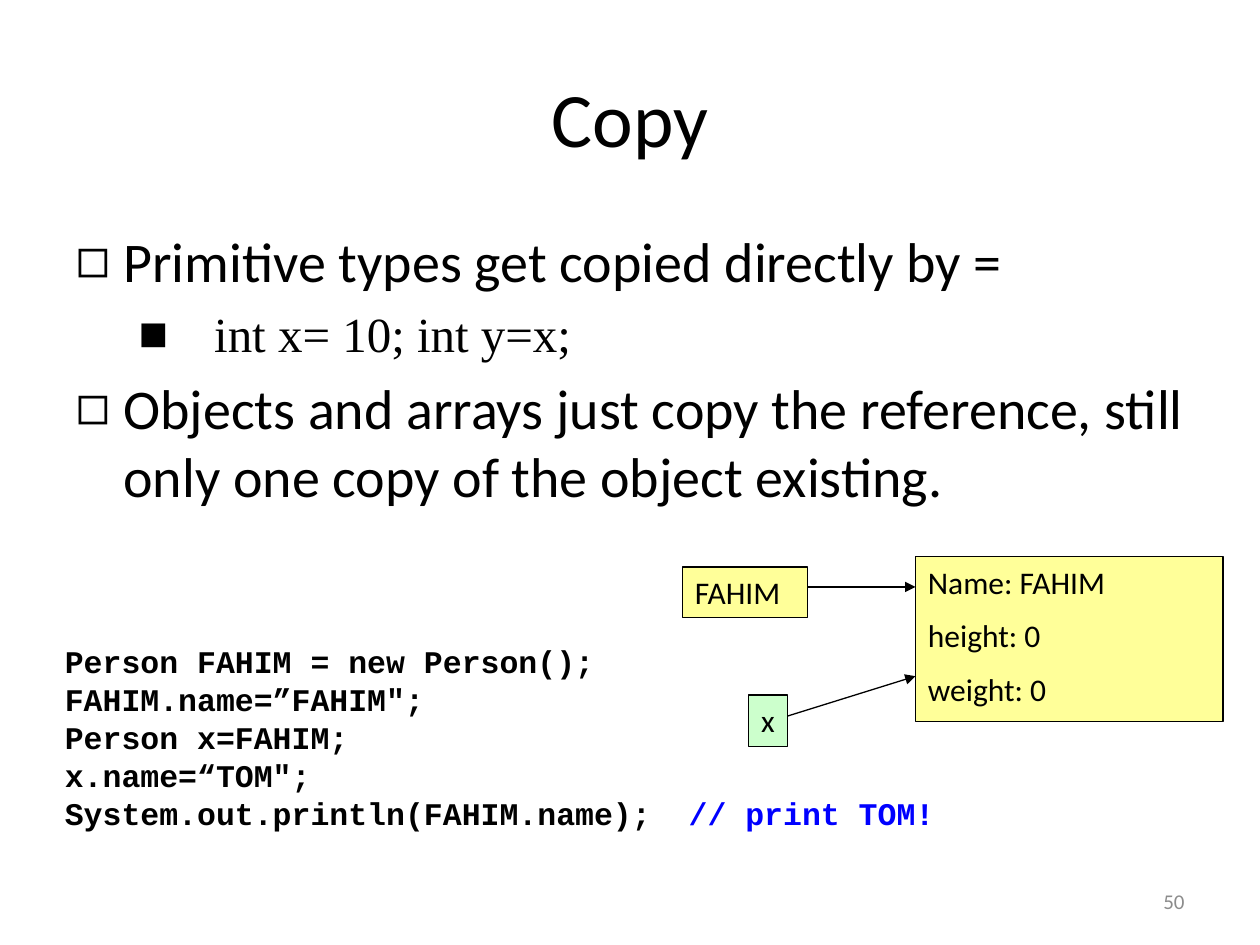
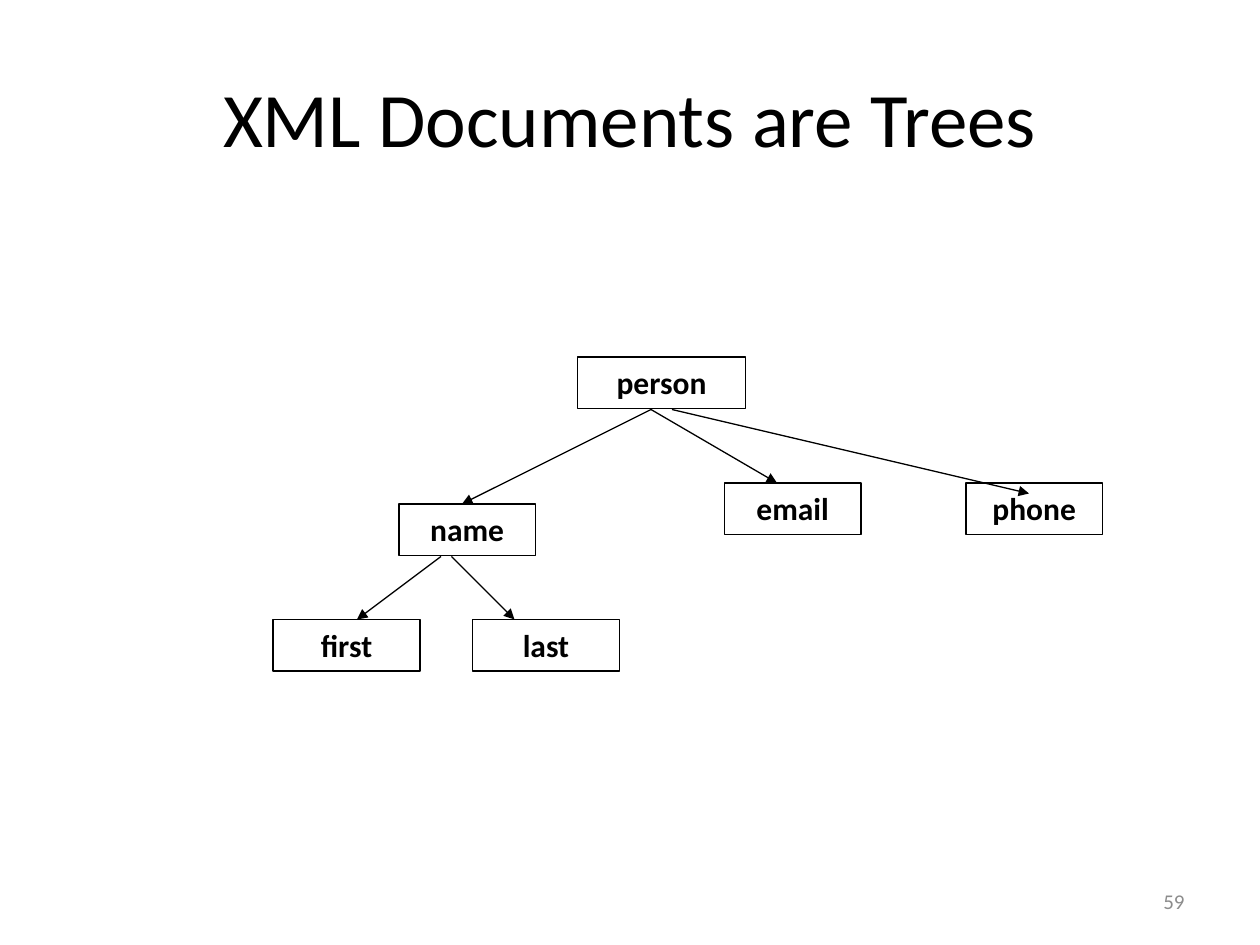
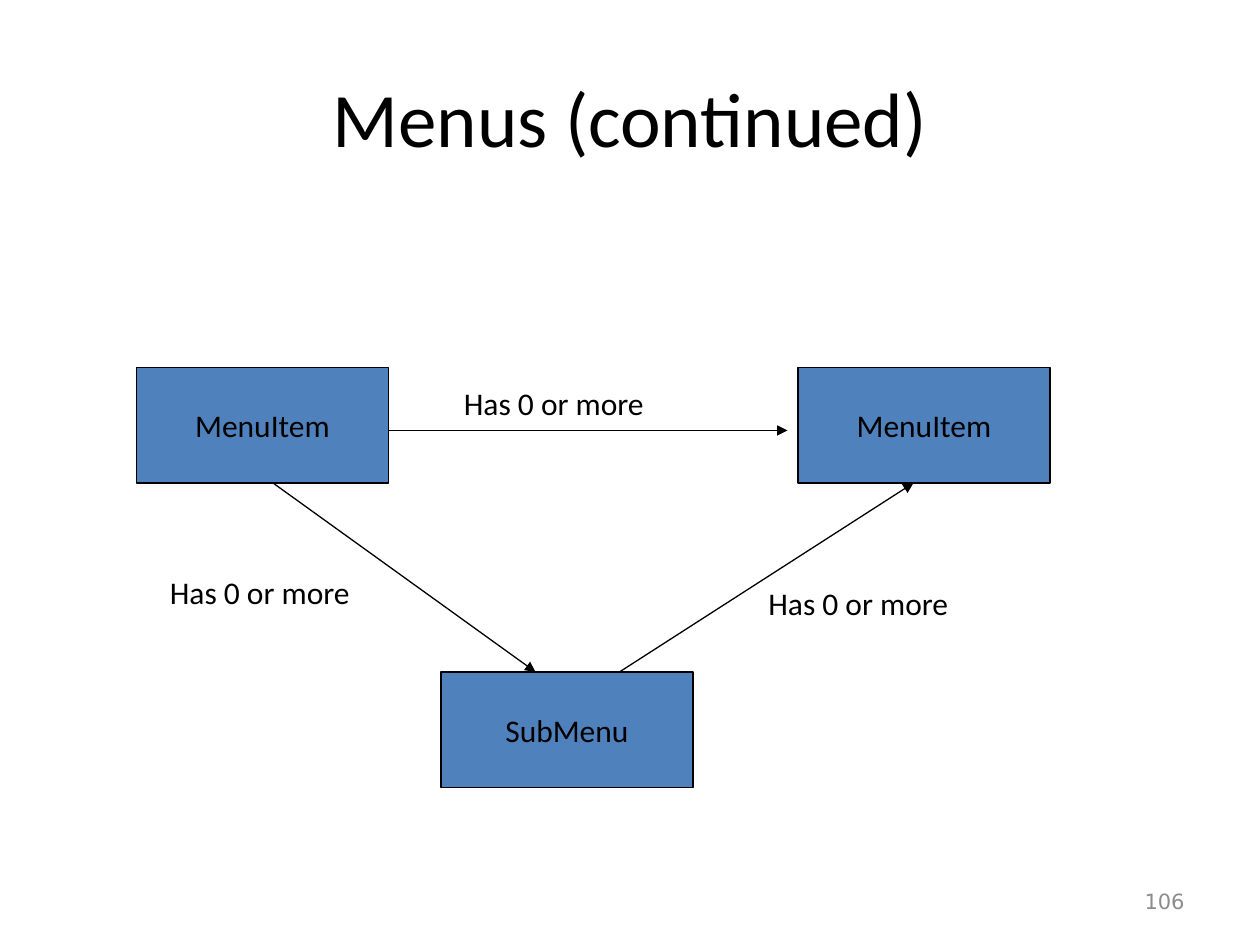
"""Build three lecture slides on object copies, XML trees and menus."""
from lxml import etree
from pptx import Presentation
from pptx.dml.color import RGBColor
from pptx.enum.shapes import MSO_CONNECTOR, MSO_SHAPE
from pptx.enum.text import MSO_ANCHOR, MSO_AUTO_SIZE, PP_ALIGN
from pptx.oxml.ns import qn
from pptx.util import Inches, Pt

RECTANGLE, STRAIGHT = MSO_SHAPE.RECTANGLE, MSO_CONNECTOR.STRAIGHT
TOP, MIDDLE = MSO_ANCHOR.TOP, MSO_ANCHOR.MIDDLE
LEFT, CENTER, RIGHT = PP_ALIGN.LEFT, PP_ALIGN.CENTER, PP_ALIGN.RIGHT
NO_RESIZE = MSO_AUTO_SIZE.NONE
BLACK, GRAY, CODE_BLUE = "000000", "8C8C8C", "0000FF"
YELLOW, GREEN, MENU_BLUE = "FFFF99", "CCFFCC", "4F81BD"

presentation = Presentation()
presentation.slide_width = Inches(10)
presentation.slide_height = Inches(7.5)
CELL = presentation.slide_width / 120

TITLE_AREA = (6, 3.6, 108, 15)
BODY_AREA = (6, 21, 108, 29.6)
NUMBER_AREA = (86, 83.4, 28, 4.8)
TITLE_FONT = {"name": "Calibri", "size": Pt(44)}
LABEL_FONT = {"name": "Calibri", "size": Pt(18)}
BOLD_FONT = {**LABEL_FONT, "bold": True}
CODE_FONT = {**BOLD_FONT, "name": "Courier New"}


def add_text(slide, area, lines, font=LABEL_FONT, color=BLACK, fill=None,
             outlined=False, align=LEFT, anchor=TOP, gap=0):
    place = [round(cells * CELL) for cells in area]
    if outlined:
        shape = slide.shapes.add_shape(RECTANGLE, *place)
        shape.shadow.inherit = False
        shape.line.color.rgb = RGBColor.from_string(BLACK)
        shape.line.width = Pt(0.75)
        shape.fill.background()
    else:
        shape = slide.shapes.add_textbox(*place)
    if fill:
        shape.fill.solid()
        shape.fill.fore_color.rgb = RGBColor.from_string(fill)
    frame = shape.text_frame
    frame.word_wrap = True
    frame.vertical_anchor = anchor
    frame.text = "\n".join(lines)
    for index, paragraph in enumerate(frame.paragraphs):
        paragraph.alignment = align
        paragraph.space_before = Pt(gap if index else 0)
        for run in paragraph.runs:
            run.font.color.rgb = RGBColor.from_string(color)
            for name, value in font.items():
                setattr(run.font, name, value)
    return shape


def add_arrow(slide, *ends):
    connector = slide.shapes.add_connector(STRAIGHT, *[round(cells * CELL) for cells in ends])
    connector.line.color.rgb = RGBColor.from_string(BLACK)
    connector.line.width = Pt(0.75)
    etree.SubElement(connector.line._get_or_add_ln(), qn("a:tailEnd"), type="triangle")
    etree.SubElement(connector._element.spPr, qn("a:effectLst"))


slides = []
for title, number, number_font, layout in (
    ("Copy", "50", "Calibri", 1),
    ("XML Documents are Trees", "59", "Calibri", 5),
    ("Menus (continued)", "106", "DejaVu Sans", 5),
):
    slide = presentation.slides.add_slide(presentation.slide_layouts[layout])
    heading = slide.shapes.title
    for side, cells in zip(("left", "top", "width", "height"), TITLE_AREA):
        setattr(heading, side, round(cells * CELL))
    heading.text_frame.text = title
    heading.text_frame.vertical_anchor = MIDDLE
    paragraph = heading.text_frame.paragraphs[0]
    paragraph.alignment = CENTER
    paragraph.font.color.rgb = RGBColor.from_string(BLACK)
    for name, value in TITLE_FONT.items():
        setattr(paragraph.font, name, value)
    add_text(slide, NUMBER_AREA, [number], {"name": number_font, "size": Pt(12)},
             GRAY, align=RIGHT, anchor=MIDDLE)
    slides.append(slide)
copy_slide, tree_slide, menu_slide = slides

body = copy_slide.placeholders[1]
for side, cells in zip(("left", "top", "width", "height"), BODY_AREA):
    setattr(body, side, round(cells * CELL))
body_lines = (
    ("Primitive types get copied directly by =", 0),
    ("int x= 10; int y=x;", 1),
    ("Objects and arrays just copy the reference, still only one copy of the object existing.", 0),
)
level_formats = (
    ({"name": "Calibri", "size": Pt(32)}, "◻", 0.38, 0.38),
    ({"name": "Times New Roman", "size": Pt(28)}, "■", 1.1, 0.6),
)
body.text_frame.text = "\n".join(text for text, level in body_lines)
body.text_frame.auto_size = NO_RESIZE
for paragraph, (text, level) in zip(body.text_frame.paragraphs, body_lines):
    font, bullet, margin, hanging = level_formats[level]
    paragraph.level = level
    paragraph.space_before = round(font["size"] * 0.2)
    properties = paragraph._p.get_or_add_pPr()
    properties.set("marL", str(Inches(margin)))
    properties.set("indent", str(-Inches(hanging)))
    etree.SubElement(properties, qn("a:buChar"), char=bullet)
    run = paragraph.runs[0]
    run.font.color.rgb = RGBColor.from_string(BLACK)
    for name, value in font.items():
        setattr(run.font, name, value)

for area, lines, fill in (
    ((87.2, 53, 29.3, 15.7), ["Name: FAHIM", "height: 0", "weight: 0"], YELLOW),
    ((65, 54, 11.9, 4.8), ["FAHIM"], YELLOW),
    ((71.3, 66.2, 3.7, 4.9), ["x"], GREEN),
):
    add_text(copy_slide, area, lines, fill=fill, outlined=True, gap=9)
code = add_text(copy_slide, (5, 60.6, 85.9, 19.4), [
    "Person FAHIM = new Person();",
    "FAHIM.name=”FAHIM\";",
    "Person x=FAHIM;",
    "x.name=“TOM\";",
    "System.out.println(FAHIM.name);  ",
], CODE_FONT)
remark = code.text_frame.paragraphs[-1].add_run()
remark.text = "// print TOM!"
remark.font.color.rgb = RGBColor.from_string(CODE_BLUE)
for name, value in CODE_FONT.items():
    setattr(remark.font, name, value)
add_arrow(copy_slide, 76.9, 55.9, 87.2, 55.9)
add_arrow(copy_slide, 75, 68.2, 87.2, 64.4)

for text, column, row, width in (
    ("person", 55, 34, 16), ("name", 38, 48, 13), ("email", 69, 46, 13),
    ("phone", 92, 46, 13), ("first", 26, 59, 14), ("last", 45, 59, 14),
):
    add_text(tree_slide, (column, row, width, 4.9), [text], BOLD_FONT,
             outlined=True, align=CENTER)
for ends in ((62, 39, 44, 48), (62, 39, 74, 46), (64, 39, 98, 47),
             (42, 53, 34, 59), (43, 53, 49, 59)):
    add_arrow(tree_slide, *ends)

for text, column, row in (("MenuItem", 76, 35), ("MenuItem", 13, 35), ("SubMenu", 42, 64)):
    add_text(menu_slide, (column, row, 24, 11), [text], fill=MENU_BLUE,
             outlined=True, align=CENTER, anchor=MIDDLE)
for ends in ((59, 64, 87, 46), (26, 46, 51, 64), (37, 41, 75, 41)):
    add_arrow(menu_slide, *ends)
for column, row in ((72, 55), (43, 36), (15, 54)):
    add_text(menu_slide, (column, row, 24, 4.8), ["Has 0 or more"])

presentation.save("out.pptx")
